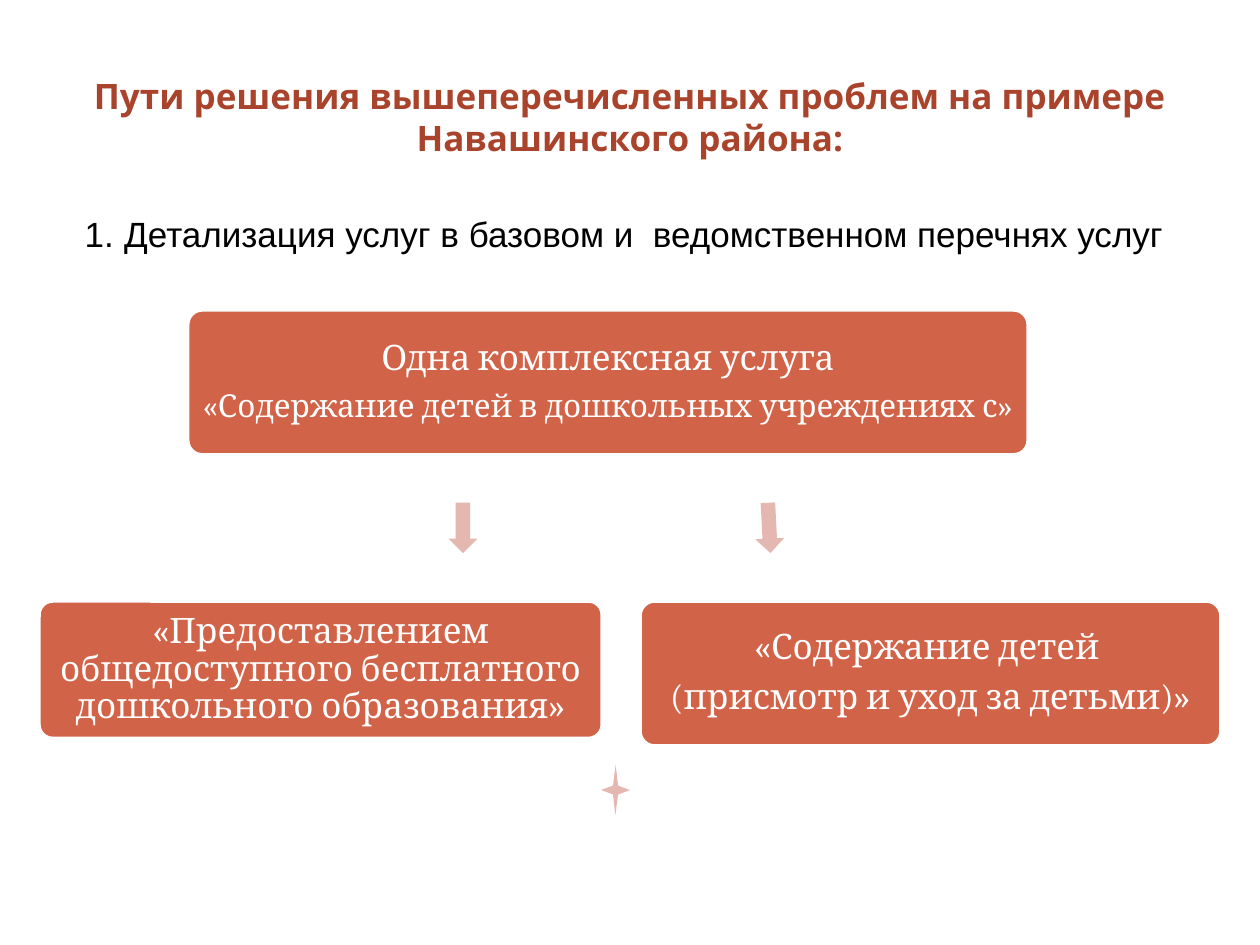
from pptx import Presentation, util as u
from pptx.dml.color import RGBColor
from pptx.enum import shapes, text
from pptx.oxml.ns import qn

BRICK = RGBColor(0xA9, 0x43, 0x2B)
CORAL = RGBColor(0xD1, 0x63, 0x49)
PINK = RGBColor(0xE5, 0xB7, 0xB1)
WHITE = RGBColor(0xFF, 0xFF, 0xFF)
BLACK = RGBColor(0, 0, 0)
COLS, ROWS = 100, 75


def grid(prs, x, y, w, h):
    """Turn columns and rows into a box of slide lengths."""
    col, row = prs.slide_width / COLS, prs.slide_height / ROWS
    return [u.Emu(round(n)) for n in (x * col, y * row, w * col, h * row)]


def write(p, words, font="Cambria", size=20, color=WHITE, bold=False, after=0, spacing=None):
    """Fill a centred paragraph with one formatted run."""
    p.alignment = text.PP_ALIGN.CENTER
    p.space_after = u.Pt(after)
    p.line_spacing = spacing
    r = p.add_run()
    r.text = words
    r.font.name, r.font.size, r.font.bold = font, u.Pt(size), bold
    r.font.color.rgb = color


def add_text(s, box, words, anchor=text.MSO_ANCHOR.TOP, **fmt):
    """Add a wrapping text box and return its paragraph."""
    tf = s.shapes.add_textbox(*box).text_frame
    tf.word_wrap, tf.vertical_anchor = True, anchor
    p = tf.paragraphs[0]
    write(p, words, **fmt)
    return p


def add_shape(s, kind, box, fill, rotation=0):
    """Add a flat filled shape without an outline."""
    sp = s.shapes.add_shape(kind, *box)
    sp.shadow.inherit = False
    sp.fill.solid()
    sp.fill.fore_color.rgb = fill
    sp.line.fill.background()
    sp.rotation = rotation
    return sp


def add_heading(s, title_box, item_box):
    """Place the title and the numbered item below it."""
    add_text(s, title_box, "Пути решения вышеперечисленных проблем на примере Навашинского района:",
             anchor=text.MSO_ANCHOR.MIDDLE, font="Open Sans", color=BRICK, bold=True)
    p = add_text(s, item_box, " Детализация услуг в базовом и  ведомственном перечнях услуг ",
                 font="Arial", color=BLACK, after=6)
    pPr = p._p.get_or_add_pPr()
    number = pPr.makeelement(qn("a:buAutoNum"), {"type": "arabicPeriod"})
    pPr.append(number)


def add_card(s, box, lines):
    """Place a rounded card with its (words, size) lines."""
    sp = add_shape(s, shapes.MSO_SHAPE.ROUNDED_RECTANGLE, box, CORAL)
    sp.adjustments[0] = 0.1
    sp.line.color.rgb, sp.line.width = WHITE, u.Pt(2)
    tf = sp.text_frame
    tf.word_wrap, tf.vertical_anchor = True, text.MSO_ANCHOR.MIDDLE
    tf.margin_left = tf.margin_right = tf.margin_top = tf.margin_bottom = u.Inches(0.08)
    for i, (words, size) in enumerate(lines):
        p = tf.add_paragraph() if i else tf.paragraphs[0]
        write(p, words, size=size, after=0.35 * size, spacing=0.9)


def main():
    """Build the slide and save it."""
    prs = Presentation()
    prs.slide_width, prs.slide_height = u.Inches(10), u.Inches(7.5)
    s = prs.slides.add_slide(prs.slide_layouts[6])
    add_heading(s, grid(prs, 5, 3, 90, 12.5), grid(prs, 2.3, 16.4, 95.3, 4.4))

    cards = [
        ((14.9, 24.6, 66.7, 11.5), [("Одна комплексная услуга", 20),
                                    ("«Содержание детей в дошкольных учреждениях с»", 18)]),
        ((50.8, 47.7, 46.1, 11.5), [("«Содержание детей ", 20),
                                    ("(присмотр и уход за детьми)»", 20)]),
        ((3.1, 47.7, 44.7, 10.9), [("«Предоставлением общедоступного бесплатного "
                                    "дошкольного образования»", 20)]),
    ]
    for box, lines in cards:
        add_card(s, grid(prs, *box), lines)

    kinds = shapes.MSO_SHAPE
    for kind, x, y, rotation in [(kinds.DOWN_ARROW, 35.6, 39.9, 0),
                                 (kinds.DOWN_ARROW, 59.9, 39.9, 357.1),
                                 (kinds.STAR_4_POINT, 47.7, 60.7, 180.3)]:
        add_shape(s, kind, grid(prs, x, y, 2.3, 4), PINK, rotation)
    prs.save("out.pptx")


if __name__ == "__main__":
    main()
